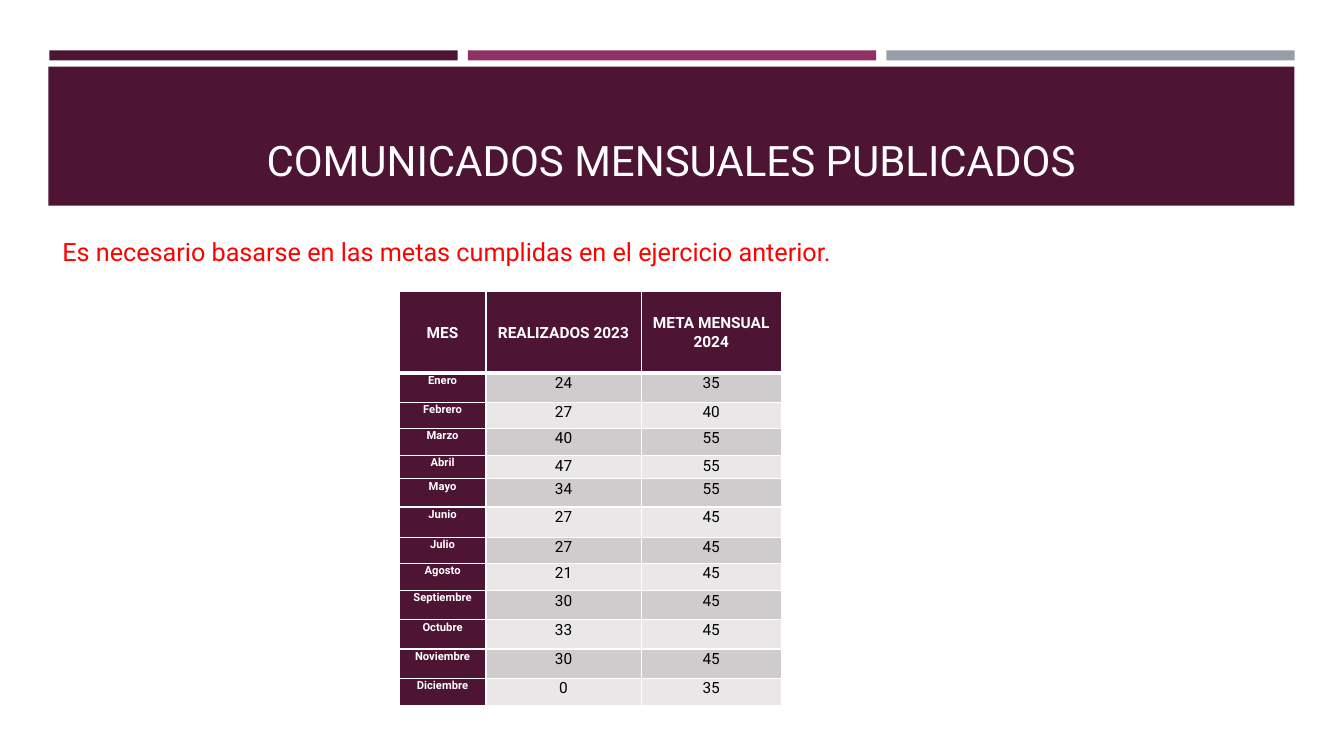
from lxml import etree
from pptx import Presentation
from pptx.dml.color import RGBColor
from pptx.enum.shapes import MSO_SHAPE
from pptx.enum.text import MSO_ANCHOR, PP_ALIGN
from pptx.oxml.ns import qn
from pptx.util import Inches, Pt

RECT = MSO_SHAPE.RECTANGLE
LEFT, CENTER = PP_ALIGN.LEFT, PP_ALIGN.CENTER
TOP, MIDDLE, BOTTOM = MSO_ANCHOR.TOP, MSO_ANCHOR.MIDDLE, MSO_ANCHOR.BOTTOM

PLUM = RGBColor(0x4D, 0x14, 0x34)
BERRY = RGBColor(0x90, 0x31, 0x63)
GRAY = RGBColor(0x96, 0x9F, 0xA7)
DARK = RGBColor(0xD0, 0xCC, 0xCE)
LIGHT = RGBColor(0xE9, 0xE7, 0xE8)
WHITE = RGBColor(0xFF, 0xFF, 0xFF)
BLACK = RGBColor(0, 0, 0)
RED = RGBColor(0xFF, 0, 0)

HEADS = ["MES", "REALIZADOS 2023", "META MENSUAL 2024"]
MONTHS = [
    ("Enero", 24, 35), ("Febrero", 27, 40), ("Marzo", 40, 55),
    ("Abril", 47, 55), ("Mayo", 34, 55), ("Junio", 27, 45),
    ("Julio", 27, 45), ("Agosto", 21, 45), ("Septiembre", 30, 45),
    ("Octubre", 33, 45), ("Noviembre", 30, 45), ("Diciembre", 0, 35),
]
WIDTHS = [0.86, 1.54, 1.39]
HEIGHTS = [0.81, 0.29, 0.26, 0.27, 0.23, 0.28, 0.3,
           0.26, 0.27, 0.29, 0.29, 0.29, 0.27]


class Page:
    font = "Roboto"

    def __init__(self, deck):
        self.slide = deck.slides.add_slide(deck.slide_layouts[6])
        self.shapes = self.slide.shapes

    def label(self, frame, text, size, color, bold=False, align=LEFT):
        para = frame.paragraphs[0]
        para.text = text
        para.alignment = align
        style = {"name": self.font, "size": Pt(size), "bold": bold}
        for key, value in style.items():
            setattr(para.runs[0].font, key, value)
        para.runs[0].font.color.rgb = color
        return para

    def bar(self, box, color):
        shape = self.shapes.add_shape(RECT, *map(Inches, box))
        shape.shadow.inherit = False
        shape.fill.solid()
        shape.fill.fore_color.rgb = color
        shape.line.fill.background()

    def text(self, box, text, size, color, align=LEFT, anchor=TOP):
        frame = self.shapes.add_textbox(*map(Inches, box)).text_frame
        frame.word_wrap = True
        frame.vertical_anchor = anchor
        self.label(frame, text, size, color, align=align)

    def edge(self, cell, side, width):
        props = cell._tc.get_or_add_tcPr()
        line = etree.SubElement(props, qn(f"a:ln{side}"), w=str(Pt(width)))
        fill = etree.SubElement(line, qn("a:solidFill"))
        etree.SubElement(fill, qn("a:srgbClr"), val=str(WHITE))

    def cell(self, cell, text, row, col):
        head, strong = row == 0, row == 0 or col == 0
        # A thick rule parts the heading from the months
        thick = {(0, "B"), (1, "T")}
        for side in "LRTB":
            self.edge(cell, side, 3 if (row, side) in thick else 1)
        cell.fill.solid()
        cell.fill.fore_color.rgb = PLUM if strong else DARK if row % 2 else LIGHT
        form = {
            "margin_left": Inches(0.07), "margin_right": Inches(0.07),
            "margin_top": 0, "margin_bottom": 0,
            "vertical_anchor": MIDDLE if head else TOP,
        }
        for key, value in form.items():
            setattr(cell, key, value)
        size = 8 if col == 0 and not head else 11
        color = WHITE if strong else BLACK
        para = self.label(cell.text_frame, str(text), size, color, strong, CENTER)
        para.line_spacing = 1.07

    def table(self, left, top, rows, widths, heights):
        box = map(Inches, (left, top, sum(widths), sum(heights)))
        table = self.shapes.add_table(len(rows), len(widths), *box).table
        for col, width in zip(table.columns, widths):
            col.width = Inches(width)
        for line, height in zip(table.rows, heights):
            line.height = Inches(height)
        for r, row in enumerate(rows):
            for c, text in enumerate(row):
                self.cell(table.cell(r, c), text, r, c)


def main():
    deck = Presentation()
    deck.slide_width, deck.slide_height = Inches(13.33), Inches(7.5)
    page = Page(deck)

    # Top stripes and title band
    for i, color in enumerate([PLUM, BERRY, GRAY]):
        page.bar((0.49 + 4.15 * i, 0.5, 4.05, 0.1), color)
    page.bar((0.48, 0.66, 12.36, 1.38), PLUM)
    page.text((0.63, 0.8, 12.06, 1.08), "COMUNICADOS MENSUALES PUBLICADOS",
              30, WHITE, CENTER, BOTTOM)

    # Monthly goals
    page.table(3.96, 2.89, [HEADS] + MONTHS, WIDTHS, HEIGHTS)

    # Note above the table
    page.text((0.52, 2.29, 12.17, 0.41),
              "Es necesario basarse en las metas cumplidas en el ejercicio anterior.",
              18, RED)

    deck.save("out.pptx")


if __name__ == "__main__":
    main()
